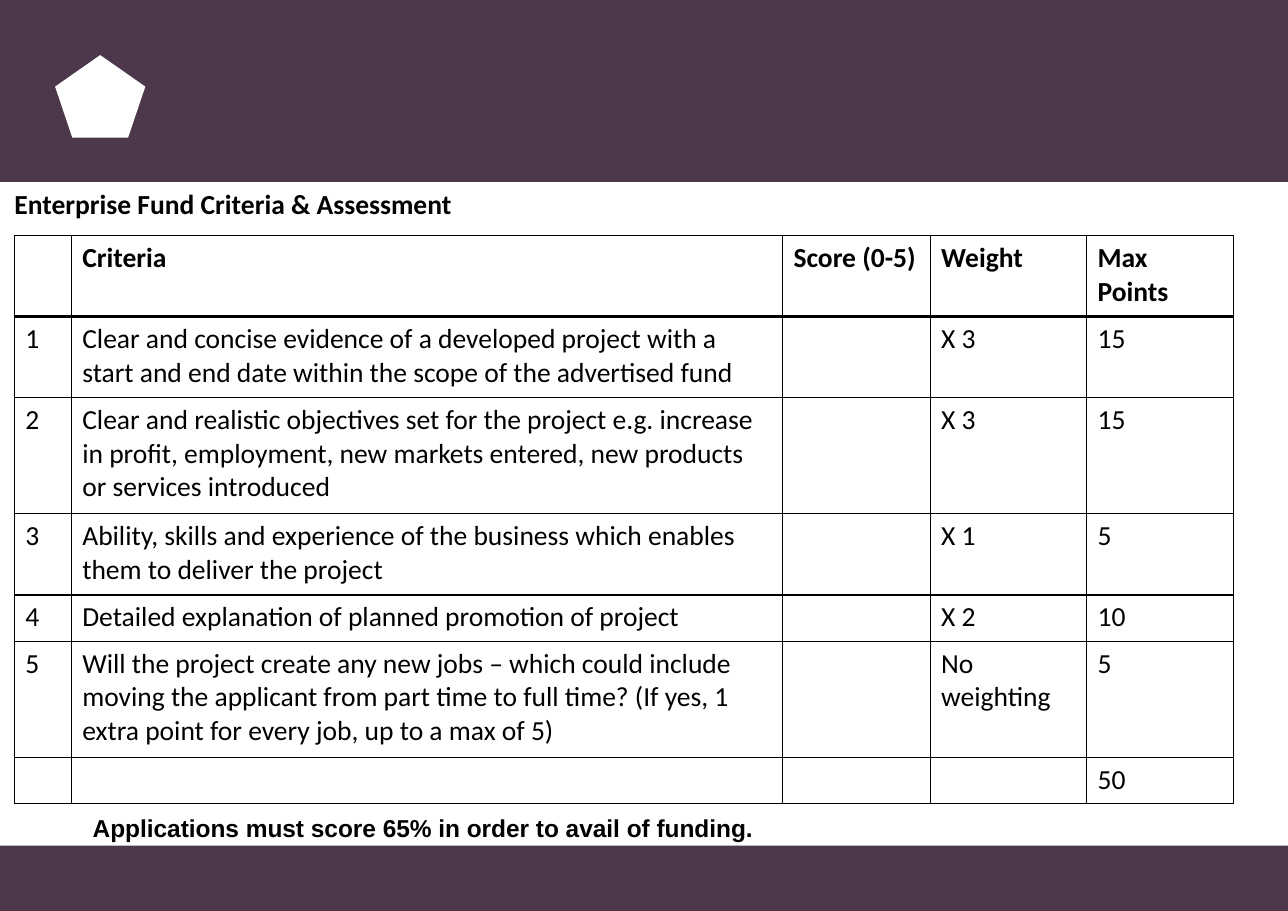
from lxml.etree import SubElement
from pptx import Presentation
from pptx.dml.color import RGBColor
from pptx.enum.shapes import MSO_SHAPE as Preset
from pptx.enum.text import MSO_ANCHOR as Anchor, MSO_AUTO_SIZE as AutoSize, PP_ALIGN as Align
from pptx.oxml.ns import qn
from pptx.util import Pt

# Content
HEADING = "Enterprise Fund Criteria & Assessment"
CRITERIA = [
    ("", "Criteria", "Score (0-5)", "Weight", "Max Points"),
    ("1", "Clear and concise evidence of a developed project with a start and end date "
          "within the scope of the advertised fund", "", "X 3", "15"),
    ("2", "Clear and realistic objectives set for the project e.g. increase in profit, "
          "employment, new markets entered, new products or services introduced", "", "X 3", "15"),
    ("3", "Ability, skills and experience of the business which enables them to deliver "
          "the project", "", "X 1", "5"),
    ("4", "Detailed explanation of planned promotion of project", "", "X 2", "10"),
    ("5", "Will the project create any new jobs – which could include moving the applicant "
          "from part time to full time? (If yes, 1 extra point for every job, up to a max of 5)",
     "", "No weighting", "5"),
    ("", "", "", "", "50"),
]
PASS_MARK = "Applications must score 65% in order to avail of funding."

# Format values, lengths in points
SLIDE_W, SLIDE_H = 841.7, 595.4
HEADER_H, FOOTER_H = 118.9, 42.8
LEFT, TABLE_TOP = 9.4, 154
COLUMN_WIDTHS = [37.2, 464.8, 96.5, 102.2, 96.2]
ROW_HEIGHTS = [53, 53, 75.8, 53.2, 30.2, 75.8, 30.4]
PLUM, WHITE, BLACK = "4C374B", "FFFFFF", "000000"
BODY = {"name": "Calibri", "size": Pt(18), "bold": False}
STRONG = {**BODY, "bold": True}
NOTE = {"name": "Arial", "size": Pt(16), "bold": True}


def paint(color_format, hex_color):
    color_format.rgb = RGBColor.from_string(hex_color)


def write(paragraph, text, style):
    paragraph.text = text
    for key, value in style.items():
        setattr(paragraph.font, key, value)
    paint(paragraph.font.color, BLACK)


def box(preset, left, top, width, height, color):
    shape = slide.shapes.add_shape(preset, Pt(left), Pt(top), Pt(width), Pt(height))
    shape.shadow.inherit = False
    shape.fill.solid()
    paint(shape.fill.fore_color, color)
    shape.line.fill.background()


def outline(cell, bottom_width, top_width):
    widths = {"a:lnL": 1, "a:lnR": 1, "a:lnT": top_width, "a:lnB": bottom_width}
    properties = cell._tc.get_or_add_tcPr()
    for tag, width in widths.items():
        line = SubElement(properties, qn(tag), w=str(Pt(width)))
        SubElement(SubElement(line, qn("a:solidFill")), qn("a:srgbClr"), val=BLACK)


deck = Presentation()
deck.slide_width, deck.slide_height = Pt(SLIDE_W), Pt(SLIDE_H)
slide = deck.slides.add_slide(deck.slide_layouts[5])

# Header and footer bands, with a plain emblem
box(Preset.RECTANGLE, 0, 0, SLIDE_W, HEADER_H, PLUM)
box(Preset.RECTANGLE, 0, SLIDE_H - FOOTER_H, SLIDE_W, FOOTER_H, PLUM)
box(Preset.REGULAR_PENTAGON, 36, 36, 59, 54, WHITE)

# Heading
heading = slide.shapes.title
heading.left, heading.top, heading.width, heading.height = Pt(LEFT), Pt(122), Pt(777), Pt(26)
frame = heading.text_frame
for key, value in {"margin_left": 0, "margin_top": 0, "margin_right": 0, "margin_bottom": 0,
                   "vertical_anchor": Anchor.TOP, "auto_size": AutoSize.NONE,
                   "word_wrap": True}.items():
    setattr(frame, key, value)
write(frame.paragraphs[0], HEADING, STRONG)
frame.paragraphs[0].alignment = Align.LEFT

# Criteria table
criteria = slide.shapes.add_table(
    len(CRITERIA), len(COLUMN_WIDTHS), Pt(LEFT), Pt(TABLE_TOP),
    Pt(sum(COLUMN_WIDTHS)), Pt(sum(ROW_HEIGHTS))).table
criteria.first_row = criteria.horz_banding = False
for column, width in zip(criteria.columns, COLUMN_WIDTHS):
    column.width = Pt(width)
for row, height in zip(criteria.rows, ROW_HEIGHTS):
    row.height = Pt(height)
for r, entries in enumerate(CRITERIA):
    for c, entry in enumerate(entries):
        cell = criteria.cell(r, c)
        outline(cell, bottom_width=2 if r == 0 else 1, top_width=2 if r == 1 else 1)
        cell.fill.solid()
        paint(cell.fill.fore_color, WHITE)
        write(cell.text_frame.paragraphs[0], entry, STRONG if r == 0 else BODY)

# Pass mark
pass_mark = slide.shapes.add_textbox(Pt(0), Pt(526.3), Pt(553), Pt(28)).text_frame
pass_mark.word_wrap = True
note = pass_mark.paragraphs[0]
write(note, PASS_MARK, NOTE)
note.alignment, note.line_spacing = Align.CENTER, 1.07

deck.save("out.pptx")
